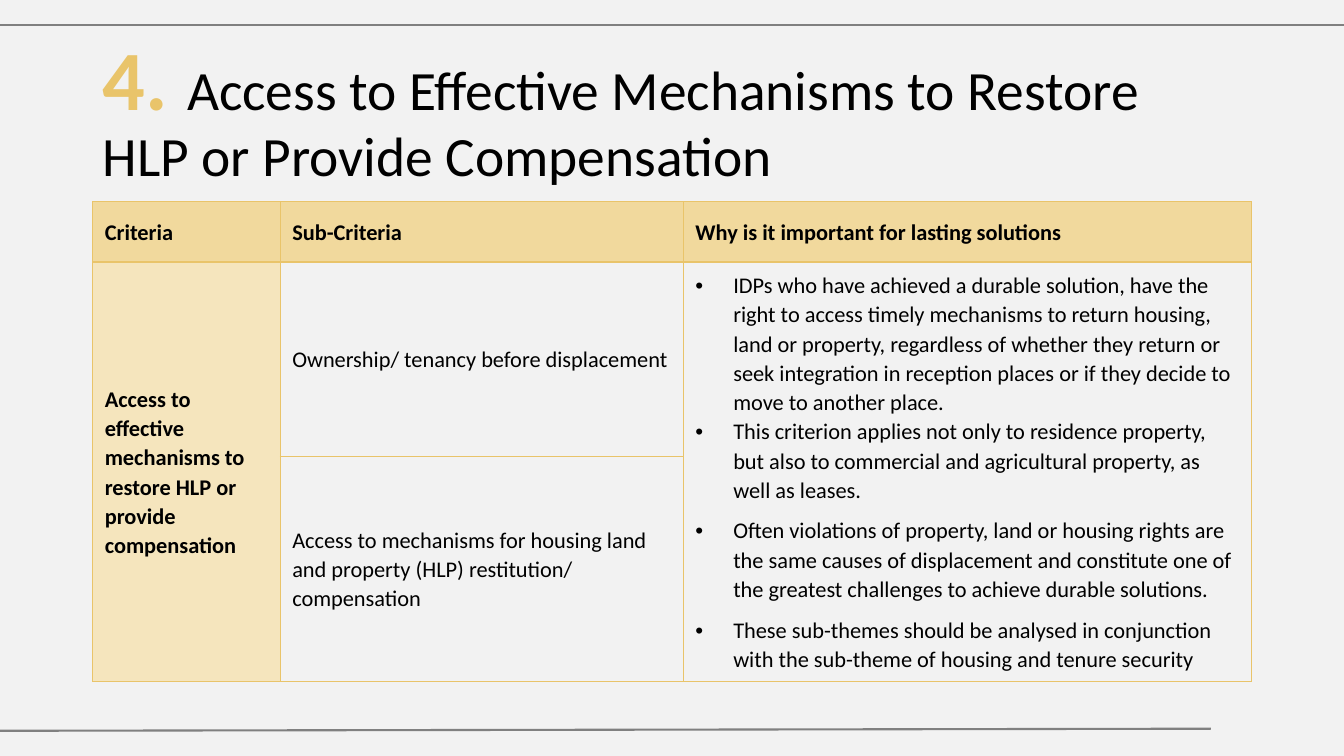
from dataclasses import dataclass

from lxml.etree import SubElement
from pptx import Presentation
from pptx.dml.color import RGBColor
from pptx.enum.shapes import MSO_CONNECTOR
from pptx.enum.text import MSO_ANCHOR, MSO_AUTO_SIZE, PP_ALIGN
from pptx.oxml.ns import qn
from pptx.util import Pt

BACKGROUND = RGBColor(0xF2, 0xF2, 0xF2)
RULE_GREY = RGBColor(0x80, 0x80, 0x80)
GOLD = RGBColor(0xE9, 0xC4, 0x6A)
HEADER_GOLD = RGBColor(0xF1, 0xD9, 0x9D)
CRITERION_GOLD = RGBColor(0xF5, 0xE5, 0xBD)
BLACK = RGBColor(0, 0, 0)
FONT = "Calibri"

SLIDE_WIDTH, SLIDE_HEIGHT = 960, 540
LEFT = 66.24
COLUMN_WIDTHS = (133.92, 288, 406.08)
ROW_HEIGHTS = (43.2, 139, 160.6)
BULLET_INDENT = 27


@dataclass(frozen=True)
class Rule:
    start: tuple[float, float]
    end: tuple[float, float]


@dataclass(frozen=True)
class CellText:
    row: int
    column: int
    paragraphs: tuple[str, ...]
    fill: RGBColor | None = None
    bold: bool = False
    bullets: bool = False
    row_span: int = 1


RULES = (Rule((0, 18), (SLIDE_WIDTH, 18)), Rule((0, 522), (865, 520.5)))

HEADINGS = ("Criteria", "Sub-Criteria", "Why is it important for lasting solutions")
REASONS = (
    "IDPs who have achieved a durable solution, have the right to access timely "
    "mechanisms to return housing, land or property, regardless of whether they return "
    "or seek integration in reception places or if they decide to move to another place.",
    "This criterion applies not only to residence property, but also to commercial and "
    "agricultural property, as well as leases.",
    "Often violations of property, land or housing rights are the same causes of "
    "displacement and constitute one of the greatest challenges to achieve durable solutions.",
    "These sub-themes should be analysed in conjunction with the sub-theme of housing "
    "and tenure security",
)
CELLS = (
    *(CellText(0, column, (heading,), fill=HEADER_GOLD, bold=True)
      for column, heading in enumerate(HEADINGS)),
    CellText(1, 0, ("Access to effective mechanisms to restore HLP or provide compensation",),
             fill=CRITERION_GOLD, bold=True, row_span=2),
    CellText(1, 1, ("Ownership/ tenancy before displacement",)),
    CellText(2, 1, ("Access to mechanisms for housing land and property (HLP) "
                    "restitution/ compensation",)),
    CellText(1, 2, REASONS, bullets=True, row_span=2),
)


def add_span(para, text: str, *, size: float, color: RGBColor = BLACK,
             bold: bool = False) -> None:
    span = para.add_run()
    span.text = text
    span.font.name = FONT
    span.font.size = Pt(size)
    span.font.bold = bold
    span.font.color.rgb = color


def add_rule(page, rule: Rule) -> None:
    line = page.shapes.add_connector(
        MSO_CONNECTOR.STRAIGHT, *(Pt(value) for value in rule.start + rule.end))
    line.line.color.rgb = RULE_GREY
    line.line.width = Pt(1.5)
    SubElement(line._element.spPr, qn("a:effectLst"))


def fill_title(page) -> None:
    title = page.shapes.title
    title.left, title.top, title.width, title.height = Pt(LEFT), Pt(28.8), Pt(756), Pt(104.4)
    frame = title.text_frame
    frame.word_wrap = True
    frame.auto_size = MSO_AUTO_SIZE.NONE
    frame.vertical_anchor = MSO_ANCHOR.MIDDLE
    para = frame.paragraphs[0]
    para.alignment = PP_ALIGN.LEFT
    para.line_spacing = 0.9
    add_span(para, "4. ", size=60.3, color=GOLD, bold=True)
    add_span(para, "Access to Effective Mechanisms to Restore HLP or Provide Compensation",
             size=39.6)


def add_bullet(para) -> None:
    properties = para._p.get_or_add_pPr()
    properties.set("marL", str(Pt(BULLET_INDENT)))
    properties.set("indent", str(-Pt(BULLET_INDENT)))
    SubElement(properties, qn("a:buFont"), typeface="Arial")
    SubElement(properties, qn("a:buChar"), char="•")


def add_borders(cell) -> None:
    """Draw a gold line on all four sides; borders must precede the cell's fill."""
    properties = cell._tc.get_or_add_tcPr()
    for side in ("lnL", "lnR", "lnT", "lnB"):
        border = SubElement(properties, qn(f"a:{side}"), w=str(Pt(1)))
        solid = SubElement(border, qn("a:solidFill"))
        SubElement(solid, qn("a:srgbClr"), val=str(GOLD))


def fill_cell(table, content: CellText) -> None:
    cell = table.cell(content.row, content.column)
    if content.row_span > 1:
        cell.merge(table.cell(content.row + content.row_span - 1, content.column))
    if content.fill is not None:
        cell.fill.solid()
        cell.fill.fore_color.rgb = content.fill
    cell.vertical_anchor = MSO_ANCHOR.MIDDLE
    cell.margin_left = cell.margin_right = Pt(8.64)
    cell.margin_top = cell.margin_bottom = Pt(5.76)
    frame = cell.text_frame
    for index, text in enumerate(content.paragraphs):
        para = frame.add_paragraph() if index else frame.paragraphs[0]
        para.line_spacing = 1.07
        para.space_after = Pt(0 if content.bullets and index == 0 else 8)
        if content.bullets:
            add_bullet(para)
        add_span(para, text, size=16, bold=content.bold)


def add_criteria_table(page) -> None:
    table = page.shapes.add_table(
        len(ROW_HEIGHTS), len(COLUMN_WIDTHS), Pt(LEFT), Pt(144),
        Pt(sum(COLUMN_WIDTHS)), Pt(sum(ROW_HEIGHTS))).table
    table.first_row = False
    table.horz_banding = False
    for column, width in zip(table.columns, COLUMN_WIDTHS):
        column.width = Pt(width)
    for row, height in zip(table.rows, ROW_HEIGHTS):
        row.height = Pt(height)
    for cell in table.iter_cells():
        add_borders(cell)
        cell.fill.background()
    for content in CELLS:
        fill_cell(table, content)


def main() -> None:
    deck = Presentation()
    deck.slide_width, deck.slide_height = Pt(SLIDE_WIDTH), Pt(SLIDE_HEIGHT)
    page = deck.slides.add_slide(deck.slide_layouts.get_by_name("Title Only"))
    page.background.fill.solid()
    page.background.fill.fore_color.rgb = BACKGROUND
    for rule in RULES:
        add_rule(page, rule)
    fill_title(page)
    add_criteria_table(page)
    deck.save("out.pptx")


if __name__ == "__main__":
    main()
